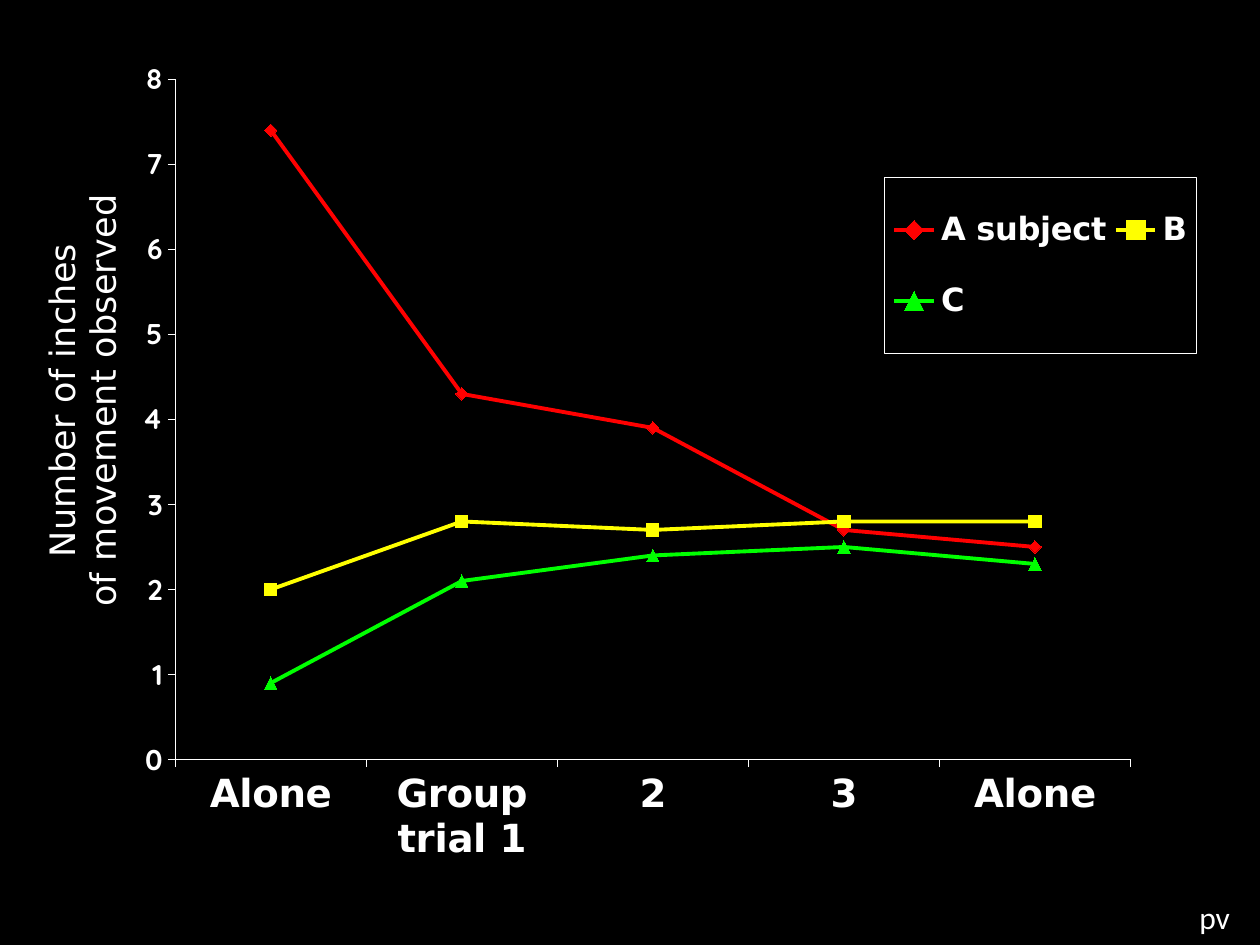
from dataclasses import dataclass

from lxml import etree
from pptx import Presentation
from pptx.chart.data import CategoryChartData
from pptx.dml.color import RGBColor
from pptx.enum.chart import XL_CHART_TYPE, XL_LEGEND_POSITION, XL_MARKER_STYLE, XL_TICK_MARK
from pptx.oxml.ns import qn
from pptx.util import Inches, Pt

LINE_MARKERS = XL_CHART_TYPE.LINE_MARKERS
LEGEND_RIGHT = XL_LEGEND_POSITION.RIGHT
TICK_OUTSIDE, TICK_NONE = XL_TICK_MARK.OUTSIDE, XL_TICK_MARK.NONE
DIAMOND, SQUARE, TRIANGLE = (
    XL_MARKER_STYLE.DIAMOND, XL_MARKER_STYLE.SQUARE, XL_MARKER_STYLE.TRIANGLE)


@dataclass(frozen=True)
class Theme:
    background: str = "000000"
    text: str = "FFFFFF"
    chart_font: str = "DejaVu Sans"
    value_font: str = "Quicksand"
    note_font: str = "Calibri"
    chart_size: float = 21
    category_size: float = 22.1
    value_size: float = 16.3
    legend_size: float = 18.3
    title_size: float = 20
    note_size: float = 18
    axis_width: float = 0.28
    series_width: float = 2.2
    marker_size: int = 7


THEME = Theme()
CATEGORIES = ["Alone", "Group trial 1", "2", "3", "Alone"]
# Name, values, colour, marker
SUBJECTS = [
    ("A subject", (7.4, 4.3, 3.9, 2.7, 2.5), "FF0000", DIAMOND),
    ("B", (2, 2.8, 2.7, 2.8, 2.8), "FFFF00", SQUARE),
    ("C", (0.9, 2.1, 2.4, 2.5, 2.3), "00FF00", TRIANGLE),
]


def style_font(font, name=THEME.chart_font, size=THEME.chart_size, bold=True):
    font.name, font.size, font.bold = name, Pt(size), bold
    font.color.rgb = RGBColor.from_string(THEME.text)


def write_text(text_frame, text, **font_format):
    """Write one paragraph per line of text."""
    for index, line in enumerate(text.split("\n")):
        paragraph = text_frame.add_paragraph() if index else text_frame.paragraphs[0]
        run = paragraph.add_run()
        run.text = line
        style_font(run.font, **font_format)


def style_line(line, color, width):
    line.color.rgb = RGBColor.from_string(color)
    line.width = Pt(width)


def place(element, index, inner=False, **fractions):
    """Give a chart part a manual layout in fractions of the chart."""
    for old_layout in element.findall(qn("c:layout")):
        element.remove(old_layout)
    layout = etree.Element(qn("c:layout"))
    manual = etree.SubElement(layout, qn("c:manualLayout"))
    settings = {"layoutTarget": "inner"} if inner else {}
    settings.update(xMode="edge", yMode="edge", **fractions)
    for tag, value in settings.items():
        etree.SubElement(manual, qn(f"c:{tag}")).set("val", str(value))
    element.insert(index, layout)


def style_axis(axis, **font_format):
    axis.has_major_gridlines = False
    axis.major_tick_mark, axis.minor_tick_mark = TICK_OUTSIDE, TICK_NONE
    style_font(axis.tick_labels.font, **font_format)
    style_line(axis.format.line, THEME.text, THEME.axis_width)


def add_axis_title(axis, text):
    text_frame = axis.axis_title.text_frame
    write_text(text_frame, text, size=THEME.title_size, bold=False)
    body = text_frame._txBody.find(qn("a:bodyPr"))
    body.set("rot", "-5400000")
    body.set("vert", "horz")
    place(axis.axis_title._element, 1, x=0.023, y=0.18)


def add_legend(chart):
    chart.has_legend = True
    legend = chart.legend
    legend.position = LEGEND_RIGHT
    legend.include_in_layout = False
    style_font(legend.font, size=THEME.legend_size)
    place(legend._element, 1, x=0.706, y=0.166, w=0.251, h=0.193)
    # Thin frame, placed before the text properties
    frame = etree.Element(qn("c:spPr"))
    line = etree.SubElement(frame, qn("a:ln"), w=str(Pt(THEME.axis_width)))
    fill = etree.SubElement(line, qn("a:solidFill"))
    etree.SubElement(fill, qn("a:srgbClr"), val=THEME.text)
    legend._element.find(qn("c:txPr")).addprevious(frame)


def style_series(series, color, marker_style):
    series.smooth = False
    style_line(series.format.line, color, THEME.series_width)
    marker = series.marker
    marker.style, marker.size = marker_style, THEME.marker_size
    marker.format.fill.solid()
    marker.format.fill.fore_color.rgb = RGBColor.from_string(color)
    marker.format.line.color.rgb = RGBColor.from_string(color)


def add_line_chart(slide):
    data = CategoryChartData()
    data.categories = CATEGORIES
    for name, values, _, _ in SUBJECTS:
        data.add_series(name, values)
    chart = slide.shapes.add_chart(
        LINE_MARKERS, Inches(0.06), Inches(0.21), Inches(9.86), Inches(7.23), data).chart
    chart.has_title = False
    style_font(chart.font)
    chart.plots[0].vary_by_categories = False
    for series, (_, _, color, marker) in zip(chart.plots[0].series, SUBJECTS):
        style_series(series, color, marker)

    # Axes
    style_axis(chart.category_axis, size=THEME.category_size)
    value_axis = chart.value_axis
    style_axis(value_axis, name=THEME.value_font, size=THEME.value_size)
    value_axis.minimum_scale, value_axis.maximum_scale, value_axis.major_unit = 0, 8, 1
    add_axis_title(value_axis, "Number of inches\nof movement observed")

    # Legend and plot area
    add_legend(chart)
    plot_area = chart._chartSpace.chart.plotArea
    place(plot_area, 0, inner=True, x=0.135, y=0.058, w=0.769, h=0.747)


def add_note(slide, text):
    box = slide.shapes.add_textbox(Inches(9.42), Inches(7.08), Inches(0.58), Inches(0.42))
    box.text_frame.word_wrap = True
    write_text(box.text_frame, text, name=THEME.note_font, size=THEME.note_size, bold=False)


def main():
    presentation = Presentation()
    presentation.slide_width, presentation.slide_height = Inches(10), Inches(7.5)
    slide = presentation.slides.add_slide(presentation.slide_layouts[6])
    slide.background.fill.solid()
    slide.background.fill.fore_color.rgb = RGBColor.from_string(THEME.background)
    add_line_chart(slide)
    add_note(slide, "pv")
    presentation.save("out.pptx")


if __name__ == "__main__":
    main()
